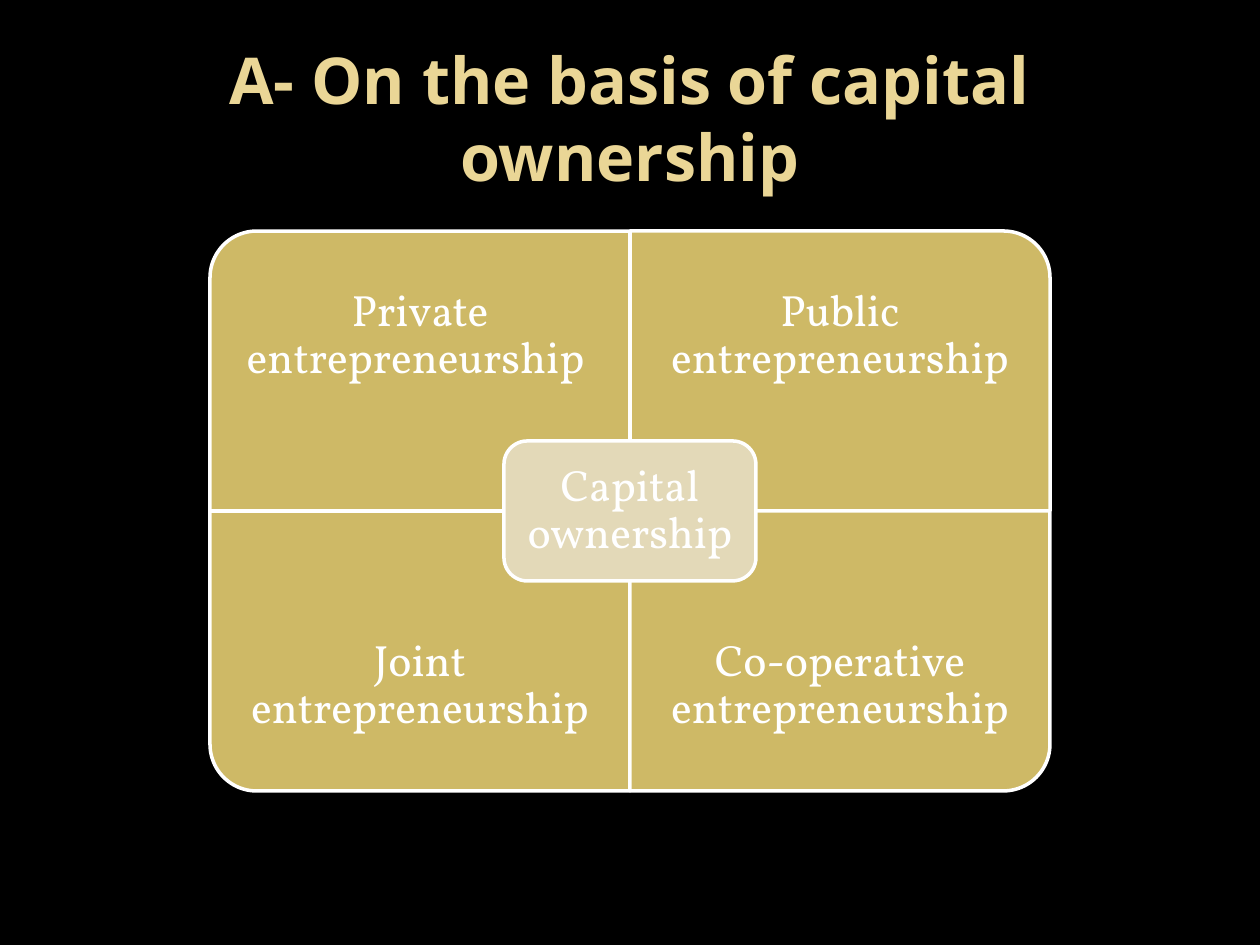
from pptx import Presentation
from pptx.dml.color import RGBColor
from pptx.enum.shapes import MSO_SHAPE
from pptx.enum.text import MSO_ANCHOR, PP_ALIGN
from pptx.util import Pt

ROUND_ONE, ROUNDED = MSO_SHAPE.ROUND_1_RECTANGLE, MSO_SHAPE.ROUNDED_RECTANGLE
MIDDLE, CENTER = MSO_ANCHOR.MIDDLE, PP_ALIGN.CENTER
PX = 914400 // 126
COLORS = {"back": "000000", "title": "EAD696", "quadrant": "CEB966",
          "hub": "E3D9B8", "white": "FFFFFF"}

TITLE = "A- On the basis of capital ownership"
HUB = "Capital ownership"
# text, column, row, rotation that turns the round corner outwards
QUADRANTS = [
    ("Private entrepreneurship ", 0, 0, 270),
    ("Public entrepreneurship", 1, 0, 0),
    ("Joint entrepreneurship", 0, 1, 180),
    ("Co-operative entrepreneurship", 1, 1, 90),
]
LEFT, TOP = 210, 231
QUAD_W, QUAD_H, LABEL_H = 420, 280, 210
HUB_W, HUB_H = 252, 140


def rgb(name):
    return RGBColor.from_string(COLORS[name])


def emu(*lengths):
    return [length * PX for length in lengths]


def add_box(kind, x, y, w, h, fill, rotation=0):
    sp = s.shapes.add_shape(kind, *emu(x, y, w, h))
    sp.rotation = rotation
    sp.shadow.inherit = False
    sp.fill.solid()
    sp.fill.fore_color.rgb = rgb(fill)
    sp.line.color.rgb = rgb("white")
    sp.line.width = Pt(2)
    return sp


def set_text(sp, text, inset, size=25, font="Vollkorn", color="white",
             bold=False, spacing=0.9):
    tf = sp.text_frame
    tf.word_wrap = True
    tf.vertical_anchor = MIDDLE
    tf.margin_left = tf.margin_right = inset * PX
    tf.margin_top = tf.margin_bottom = inset * PX
    p = tf.paragraphs[0]
    p.text = text
    p.alignment = CENTER
    p.line_spacing = spacing
    p.font.size, p.font.name, p.font.bold = Pt(size), font, bold
    p.font.color.rgb = rgb(color)


prs = Presentation()
prs.slide_width, prs.slide_height = emu(1260, 945)
s = prs.slides.add_slide(prs.slide_layouts[6])
s.background.fill.solid()
s.background.fill.fore_color.rgb = rgb("back")

# Title
title = s.shapes.add_textbox(*emu(63, 38, 1134, 158))
set_text(title, TITLE, 12, 36.9, "Open Sans", "title", True, 1.0)

# Quadrants, with labels held against the outer edge
for text, col, row, rotation in QUADRANTS:
    x, y = LEFT + col * QUAD_W, TOP + row * QUAD_H
    w, h = (QUAD_H, QUAD_W) if rotation % 180 else (QUAD_W, QUAD_H)
    add_box(ROUND_ONE, x + (QUAD_W - w) // 2, y + (QUAD_H - h) // 2, w, h,
            "quadrant", rotation)
    label = s.shapes.add_textbox(
        *emu(x, y + row * (QUAD_H - LABEL_H), QUAD_W, LABEL_H))
    set_text(label, text, 24)

# Hub in the middle
hub = add_box(ROUNDED, LEFT + QUAD_W - HUB_W // 2, TOP + QUAD_H - HUB_H // 2,
              HUB_W, HUB_H, "hub")
set_text(hub, HUB, 12)

prs.save("out.pptx")
